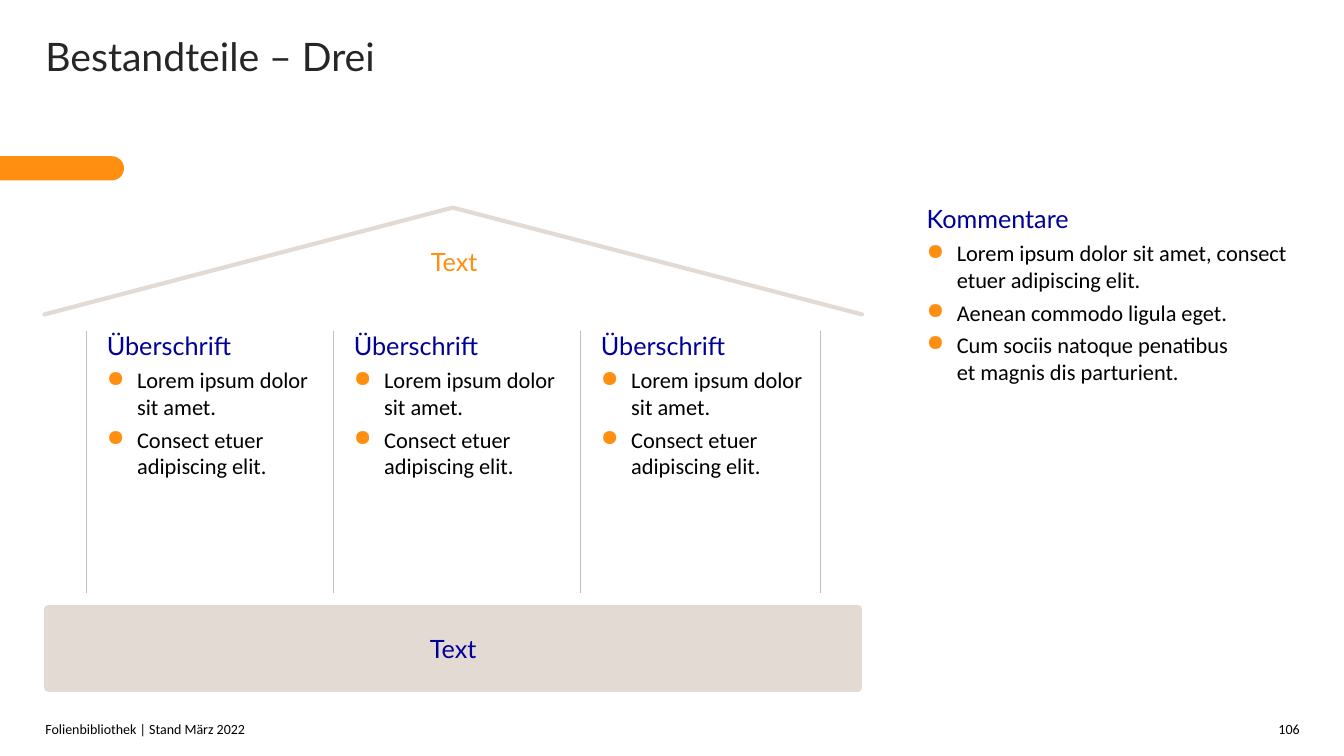
from lxml.etree import SubElement
from pptx import Presentation
from pptx.dml.color import RGBColor
from pptx.enum.shapes import MSO_CONNECTOR, MSO_SHAPE
from pptx.enum.text import MSO_ANCHOR, PP_ALIGN
from pptx.oxml.ns import qn
from pptx.util import Inches, Pt

ORANGE, BLUE, SAND = "FE8F11", "000099", "E4DAD4"
GREY, BLACK, TITLE = "BFBFBF", "000000", "262626"


def color(hex_value):
    return RGBColor.from_string(hex_value)


def write(frame, paragraphs, anchor=MSO_ANCHOR.TOP, align=PP_ALIGN.LEFT, inset=0):
    """Each paragraph is (text, size, font, colour, bulleted)."""
    frame.word_wrap = True
    frame.vertical_anchor = anchor
    frame.margin_left = frame.margin_right = Inches(inset)
    frame.margin_top = frame.margin_bottom = 0
    for index, (text, size, font, hex_value, bulleted) in enumerate(paragraphs):
        paragraph = frame.add_paragraph() if index else frame.paragraphs[0]
        paragraph.alignment = align
        if len(paragraphs) > 1:
            paragraph.space_after = Pt(4)
        if bulleted:
            paragraph.level = 1
            properties = paragraph._p.get_or_add_pPr()
            properties.set("marL", str(Inches(0.3)))
            properties.set("indent", str(-Inches(0.3)))
            bullet_color = SubElement(properties, qn("a:buClr"))
            SubElement(bullet_color, qn("a:srgbClr"), val=ORANGE)
            SubElement(properties, qn("a:buChar"), char="●")
        for number, line in enumerate(text.split("\n")):
            if number:
                paragraph.add_line_break()
            run = paragraph.add_run()
            run.text = line
            run.font.size = Pt(size)
            run.font.name = font
            run.font.color.rgb = color(hex_value)


presentation = Presentation()
presentation.slide_width = Inches(13.33)
presentation.slide_height = Inches(7.5)
slide = presentation.slides.add_slide(presentation.slide_layouts[6])
shapes = slide.shapes

# Orange tab at the left edge, rounded on the right
tab_length, tab_height = 1.23, 0.24
tab = shapes.add_shape(
    MSO_SHAPE.ROUND_2_SAME_RECTANGLE,
    Inches((tab_length - tab_height) / 2), Inches(1.67 - tab_length / 2),
    Inches(tab_height), Inches(tab_length))
tab.rotation = 90
tab.adjustments[0] = 0.5
tab.shadow.inherit = False
tab.fill.solid()
tab.fill.fore_color.rgb = color(ORANGE)
tab.line.fill.background()

# Title, footer and page number
title = shapes.add_textbox(Inches(0.45), Inches(0.32), Inches(9.61), Inches(0.55))
write(title.text_frame, [("Bestandteile – Drei", 28, "Lato", TITLE, False)])
footer = shapes.add_textbox(Inches(0.45), Inches(7.16), Inches(11.06), Inches(0.16))
write(footer.text_frame,
      [("Folienbibliothek | Stand März 2022", 10, "Calibri", BLACK, False)],
      MSO_ANCHOR.BOTTOM)
page = shapes.add_textbox(Inches(12.58), Inches(7.16), Inches(0.31), Inches(0.16))
write(page.text_frame, [("106", 10, "Calibri", BLACK, False)],
      MSO_ANCHOR.BOTTOM, PP_ALIGN.RIGHT)

# Roof
roof_label = shapes.add_textbox(Inches(0.45), Inches(2.06), Inches(8.11), Inches(1.06))
write(roof_label.text_frame, [("Text", 18, "Lato", ORANGE, False)],
      MSO_ANCHOR.MIDDLE, PP_ALIGN.CENTER, 0.12)
outline = shapes.build_freeform(Inches(0.44), Inches(3.12))
outline.add_line_segments(
    [(Inches(4.49), Inches(2.06)), (Inches(8.55), Inches(3.12))], close=False)
roof = outline.convert_to_shape()
roof.shadow.inherit = False
roof.fill.background()
roof.line.color.rgb = color(SAND)
roof.line.width = Pt(3)

# Three columns of text
pillar_top, pillar_height, pillar_step = 3.28, 2.6, 2.45
for column in range(3):
    pillar = shapes.add_textbox(
        Inches(1.06 + column * pillar_step), Inches(pillar_top),
        Inches(2.05), Inches(pillar_height))
    write(pillar.text_frame, [
        ("Überschrift", 18, "Lato", BLUE, False),
        ("Lorem ipsum dolor sit amet.", 16, "Calibri", BLACK, True),
        ("Consect etuer adipiscing elit.", 16, "Calibri", BLACK, True)])

# Dividers beside the columns
for x in (0.86, 3.31, 5.76, 8.14):
    divider = shapes.add_connector(
        MSO_CONNECTOR.STRAIGHT, Inches(x), Inches(pillar_top),
        Inches(x), Inches(pillar_top + pillar_height))
    divider.line.color.rgb = color(GREY)
    divider.line.width = Pt(0.75)
    SubElement(divider._element.spPr, qn("a:effectLst"))

# Foundation
base = shapes.add_shape(MSO_SHAPE.RECTANGLE, Inches(0.48), Inches(6.04),
                        Inches(8.03), Inches(0.78))
base.shadow.inherit = False
base.fill.solid()
base.fill.fore_color.rgb = color(SAND)
base.line.color.rgb = color(SAND)
base.line.width = Pt(6)
write(base.text_frame, [("Text", 18, "Lato", BLUE, False)],
      MSO_ANCHOR.MIDDLE, PP_ALIGN.CENTER, 0.12)

# Round ends and corners for roof and foundation
for part in (roof, base):
    stroke = part.line._get_or_add_ln()
    stroke.set("cap", "rnd")
    SubElement(stroke, qn("a:round"))

# Comments
comments = shapes.add_textbox(Inches(9.19), Inches(2.02), Inches(3.7), Inches(4.84))
write(comments.text_frame, [
    ("Kommentare", 18, "Lato", BLUE, False),
    ("Lorem ipsum dolor sit amet, consect etuer adipiscing elit.",
     16, "Calibri", BLACK, True),
    ("Aenean commodo ligula eget.", 16, "Calibri", BLACK, True),
    ("Cum sociis natoque penatibus\net magnis dis parturient.",
     16, "Calibri", BLACK, True)])

presentation.save("out.pptx")
